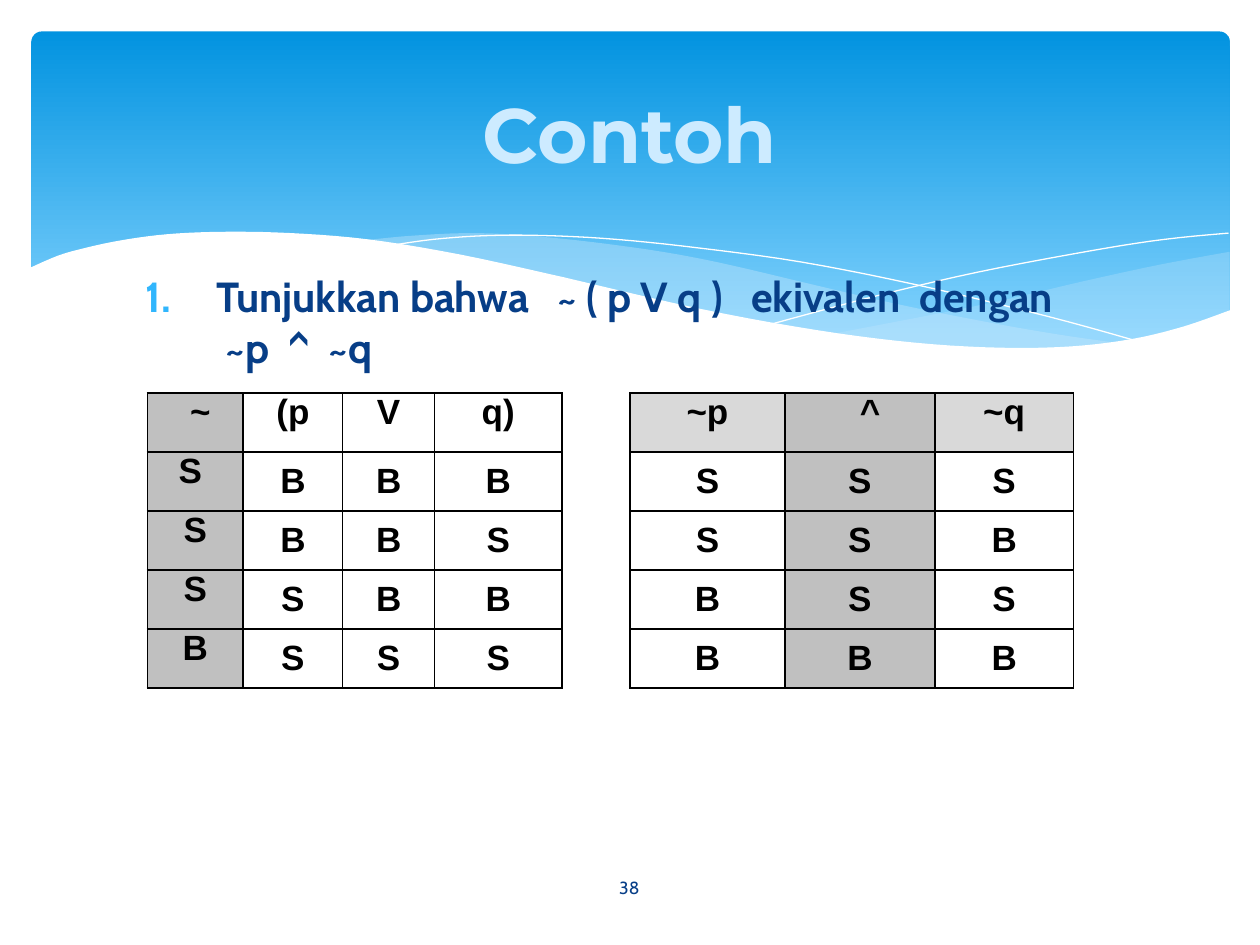
from dataclasses import dataclass, field
from typing import Optional

import pptx
import pptx.dml.color
import pptx.enum.shapes
import pptx.enum.text
import pptx.oxml
import pptx.oxml.ns
import pptx.util

# The slide is a grid of 100 columns by 75 rows of square units.
UNIT = pptx.util.Inches(0.1)
COLOURS = {
    "white": "FFFFFF", "black": "000000", "sky": "0293E0", "pale sky": "83D3FE",
    "mist": "C6E7FC", "title": "CDEBFF", "navy": "073E87", "number": "31B6FD",
    "result": "C0C0C0", "heading": "D9D9D9",
}
ANCHOR = pptx.enum.text.MSO_ANCHOR
ALIGN = pptx.enum.text.PP_ALIGN


@dataclass
class Wave:
    """Smooth curves through knots, joined end to end in grid units."""
    curves: list
    fill: Optional[str] = None
    opacity: int = 100


@dataclass
class Label:
    text: str
    box: tuple
    size: int
    font: str
    colour: str
    bold: bool = True
    align: object = ALIGN.CENTER
    anchor: object = ANCHOR.MIDDLE


@dataclass
class TruthTable:
    left: float
    columns: tuple
    rows: tuple
    result_column: int
    heading_fill: Optional[str] = None
    top_columns: tuple = ()
    nudges: dict = field(default_factory=dict)  # (row, column): units to the right


WAVES = [
    Wave([[(97.5, 20), (92.1, 21), (86.1, 22.3), (77.9, 24.2), (66.1, 26.5)],
          [(66.1, 26.5), (71.9, 27.2), (76.9, 27.7), (81.4, 27.8), (86.3, 27.5),
           (90.5, 26.9), (94.2, 25.9), (97.6, 24.7)],
          [(97.6, 24.7), (97.6, 20)]], "mist", 29),
    Wave([[(89.3, 27.3), (83.7, 26.5), (77.5, 25.4), (70.6, 24), (62.9, 22.2)],
          [(62.9, 22.2), (56.9, 20.8), (51.4, 19.8), (44.2, 18.9), (38, 18.5),
           (32.8, 18.7), (28.6, 19.1)],
          [(28.6, 19.1), (34.2, 19.9), (40.4, 21.1), (44.9, 22.2)],
          [(44.9, 22.2), (53, 24), (60.1, 25.5), (66.5, 26.6), (72.2, 27.4),
           (77.3, 27.7), (81.8, 27.8), (85.7, 27.7), (89.3, 27.3)]], "mist", 40),
    Wave([[(30.9, 19.5), (34.4, 19), (38.7, 18.7), (43.3, 18.7), (48.9, 19),
           (55.6, 19.7), (63.6, 20.8), (72.7, 22.6), (83.1, 25.1), (90.7, 27.2)]]),
    Wave([[(61.3, 25.7), (69.5, 23.5), (77.6, 21.6), (86.6, 19.9), (92.4, 19),
           (97.5, 18.5)]]),
    Wave([[(97.7, 24.6), (94, 25.9), (89.9, 26.9), (85, 27.5), (79.3, 27.6),
           (72.6, 27.2), (64.8, 26.2), (55.5, 24.5), (44.7, 22)],
          [(44.7, 22), (36.5, 20.2), (29.2, 19), (23, 18.5), (17.7, 18.4),
           (13.2, 18.6), (9.5, 19.1), (6.7, 19.7), (4.6, 20.3), (2.3, 21.3)],
          [(2.3, 21.3), (2.3, 32.9)],
          [(2.3, 32.9), (97.7, 32.9)]], "white"),
]

TITLE = Label("Contoh", (5, 3.7, 90, 13.7), 44, "Montserrat", "title")
QUESTION = Label("Tunjukkan bahwa   ~ ( p V q )   ekivalen  dengan  ~p  ^  ~q",
                 (10.6, 21, 74.1, 38.4), 24, "Cabin", "navy",
                 align=ALIGN.LEFT, anchor=ANCHOR.TOP)
PAGE = Label("38", (43.6, 68.4, 12.7, 4), 10, "Cabin", "navy", bold=False)

TABLE_TOP, ROW_HEIGHT = 31.2, 4.68
TABLES = [
    TruthTable(11.7, (7.6, 7.9, 7.3, 10.1),
               (("~", "(p", "V", "q)"), "SBBB", "SBBS", "SSBB", "BSSS"),
               result_column=0, top_columns=(0,),
               nudges={(0, 0): 0.4, (1, 0): -0.4}),
    TruthTable(50, (12.3, 11.9, 11),
               (("~p", "^", "~q"), "SSS", "SSB", "BSS", "BBB"),
               result_column=1, heading_fill="heading", nudges={(0, 1): 0.8}),
]


def units(value: float) -> int:
    return int(round(value * UNIT))


def rgb(name: str) -> pptx.dml.color.RGBColor:
    return pptx.dml.color.RGBColor.from_string(COLOURS[name])


def add_xml(parent, xml: str, index: Optional[int] = None) -> None:
    """Add an element, written with the a: prefix, to the end or at an index."""
    opening = xml.split(">")[0].rstrip("/")
    child = pptx.oxml.parse_xml(
        xml.replace(opening, opening + " " + pptx.oxml.ns.nsdecls("a"), 1))
    parent.insert(len(parent) if index is None else index, child)


def smooth(knots: list, steps: int = 5) -> list:
    """Sample a Catmull-Rom curve through the knots."""
    if len(knots) == 2:
        return knots
    padded = [knots[0], *knots, knots[-1]]
    points = [knots[0]]
    for a, b, c, d in zip(padded, padded[1:], padded[2:], padded[3:]):
        for step in range(1, steps + 1):
            t = step / steps
            points.append(tuple(
                q + t / 2 * (r - p + t * (2 * p - 5 * q + 4 * r - s
                                          + t * (3 * (q - r) + s - p)))
                for p, q, r, s in zip(a, b, c, d)))
    return points


def draw_sky(slide) -> None:
    sky = slide.shapes.add_shape(pptx.enum.shapes.MSO_SHAPE.ROUNDED_RECTANGLE,
                                 *map(units, (2.5, 2.5, 95.1, 27)))
    sky.adjustments[0] = 0.03
    sky.shadow.inherit = False
    sky.line.fill.background()
    sky.fill.gradient()
    sky.fill.gradient_angle = 270
    stops = zip(sky.fill.gradient_stops, ((0, "sky"), (0.9, "pale sky")))
    for stop, (position, colour) in stops:
        stop.position = position
        stop.color.rgb = rgb(colour)


def draw_wave(slide, wave: Wave) -> None:
    points = [tuple(map(units, point)) for knots in wave.curves for point in smooth(knots)]
    builder = slide.shapes.build_freeform(*points[0])
    builder.add_line_segments(points[1:], close=wave.fill is not None)
    outline = builder.convert_to_shape()
    outline.shadow.inherit = False
    if wave.fill is None:
        outline.fill.background()
        outline.line.color.rgb = rgb("white")
        outline.line.width = 0
        return
    outline.line.fill.background()
    outline.fill.solid()
    outline.fill.fore_color.rgb = rgb(wave.fill)
    if wave.opacity < 100:
        colour = outline.fill._xPr.find(".//" + pptx.oxml.ns.qn("a:srgbClr"))
        add_xml(colour, f'<a:alpha val="{wave.opacity * 1000}"/>')


def set_font(paragraph, size: int, name: str, colour: str, bold: bool) -> None:
    font = paragraph.runs[0].font
    for key, value in {"size": pptx.util.Pt(size), "name": name, "bold": bold}.items():
        setattr(font, key, value)
    font.color.rgb = rgb(colour)


def draw_label(slide, label: Label):
    frame = slide.shapes.add_textbox(*map(units, label.box)).text_frame
    frame.word_wrap = True
    frame.vertical_anchor = label.anchor
    paragraph = frame.paragraphs[0]
    paragraph.text = label.text
    paragraph.alignment = label.align
    set_font(paragraph, label.size, label.font, label.colour, label.bold)
    return paragraph


def number_paragraph(paragraph) -> None:
    paragraph.space_before = pptx.util.Pt(4.8)
    properties = paragraph._p.get_or_add_pPr()
    for key, value in {"marL": 5.6, "indent": -5.6}.items():
        properties.set(key, str(units(value)))
    add_xml(properties, f'<a:buClr><a:srgbClr val="{COLOURS["number"]}"/></a:buClr>')
    add_xml(properties, '<a:buAutoNum type="arabicPeriod"/>')


def format_cell(cell, text: str, fill: Optional[str], top: bool, nudge: float) -> None:
    cell.text = text
    values = {
        "margin_left": units(0.7 + 2 * max(nudge, 0)),
        "margin_right": units(0.7 + 2 * max(-nudge, 0)),
        "margin_top": 0, "margin_bottom": 0,
        "vertical_anchor": ANCHOR.TOP if top else ANCHOR.MIDDLE,
    }
    for key, value in values.items():
        setattr(cell, key, value)
    paragraph = cell.text_frame.paragraphs[0]
    paragraph.alignment = ALIGN.CENTER
    set_font(paragraph, 20, "Arial", "black", True)
    if fill is None:
        cell.fill.background()
    else:
        cell.fill.solid()
        cell.fill.fore_color.rgb = rgb(fill)
    for index, side in enumerate("LRTB"):
        add_xml(cell._tc.get_or_add_tcPr(),
                f'<a:ln{side} w="12700"><a:solidFill><a:srgbClr val="{COLOURS["black"]}"/>'
                f'</a:solidFill></a:ln{side}>', index)


def draw_table(slide, truth: TruthTable) -> None:
    height = ROW_HEIGHT * len(truth.rows)
    box = (truth.left, TABLE_TOP, sum(truth.columns), height)
    grid = slide.shapes.add_table(len(truth.rows), len(truth.columns),
                                  *map(units, box)).table
    grid.first_row = grid.horz_banding = False
    for column, width in zip(grid.columns, truth.columns):
        column.width = units(width)
    for r, values in enumerate(truth.rows):
        grid.rows[r].height = units(ROW_HEIGHT)
        for c, text in enumerate(values):
            plain = truth.heading_fill if r == 0 else None
            format_cell(grid.cell(r, c), text,
                        "result" if c == truth.result_column else plain,
                        r == 0 or c in truth.top_columns,
                        truth.nudges.get((r, c), 0))


def main() -> None:
    deck = pptx.Presentation()
    deck.slide_width, deck.slide_height = units(100), units(75)
    slide = deck.slides.add_slide(deck.slide_layouts[6])
    draw_sky(slide)
    for wave in WAVES:
        draw_wave(slide, wave)
    number_paragraph(draw_label(slide, QUESTION))
    for label in (PAGE, TITLE):
        draw_label(slide, label)
    for truth in TABLES:
        draw_table(slide, truth)
    deck.save("out.pptx")


if __name__ == "__main__":
    main()
